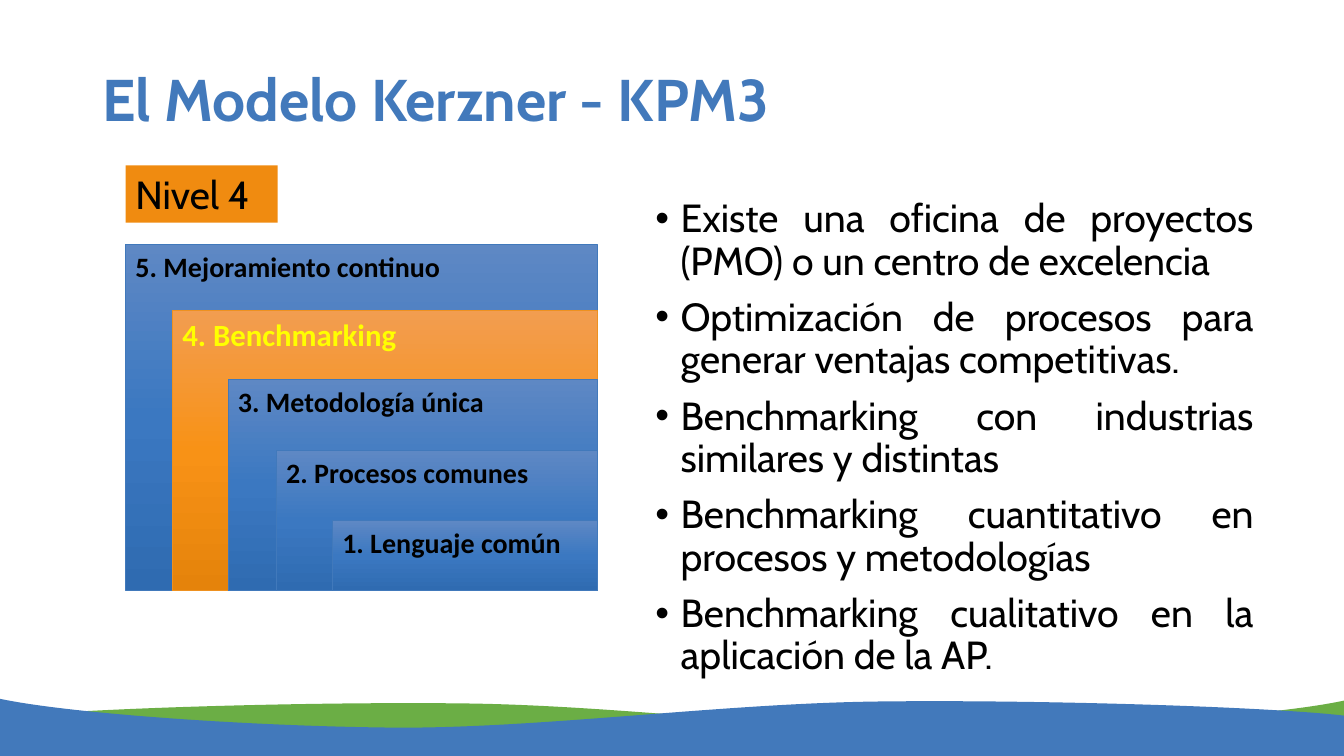
from copy import deepcopy

from lxml import etree
from pptx import Presentation
from pptx.dml.color import RGBColor
from pptx.enum.shapes import MSO_SHAPE
from pptx.enum.text import MSO_ANCHOR, MSO_AUTO_SIZE, PP_ALIGN
from pptx.oxml.ns import qn
from pptx.util import Pt

RECTANGLE = MSO_SHAPE.RECTANGLE
TOP, MIDDLE = MSO_ANCHOR.TOP, MSO_ANCHOR.MIDDLE
LEFT, JUSTIFY = PP_ALIGN.LEFT, PP_ALIGN.JUSTIFY
NO_AUTOFIT = MSO_AUTO_SIZE.NONE

WIDTH, HEIGHT = 960, 540
COLORS = {
    "blue": "4279BB", "green": "6BAE45", "orange": "F08B10",
    "black": "000000", "yellow": "FFFF00",
    "blue line": "4179BB", "orange line": "EE9120",
}
GRADIENTS = {
    "blue": ("5E88C4", "3B78C1", "2F6BB1"),
    "orange": ("F29D50", "F89216", "E5830B"),
}

# Wave crest from right to left: start point, then three Bézier curves
WAVE_START = (961, 12.2)
WAVE_CURVES = [
    ((905, 5.7), (739.4, 0.7), (627.1, 2.1)),
    ((515.5, 3.6), (391.7, 20.8), (287.3, 20.8)),
    ((182.9, 20.1), (49.7, 10.8), (0, 0)),
]

# Level name, offset from the left and top of the diagram
LEVELS = [
    ("5. Mejoramiento continuo", 0, 0),
    ("4. Benchmarking", 33.5, 47.2),
    ("3. Metodología única", 73.2, 96.4),
    ("2. Procesos comunes", 107.7, 147.3),
    ("1. Lenguaje común", 147.7, 197.3),
]
CURRENT_LEVEL = "4. Benchmarking"

PRACTICES = [
    "Existe una oficina de proyectos (PMO) o un centro de excelencia",
    "Optimización de procesos para generar ventajas competitivas.",
    "Benchmarking con industrias similares y distintas",
    "Benchmarking cuantitativo en procesos y metodologías",
    "Benchmarking cualitativo en la aplicación de la AP.",
]


def color(name):
    return RGBColor.from_string(COLORS[name])


def set_attributes(target, values):
    for name, value in values.items():
        setattr(target, name, value)


def place(shape, box):
    names = ("left", "top", "width", "height")
    set_attributes(shape, dict(zip(names, map(Pt, box))))


def write(paragraph, text, size, font_color="black", font="Cabin", bold=False, **layout):
    run = paragraph.add_run()
    run.text = text
    set_attributes(run.font, {"name": font, "size": Pt(size), "bold": bold})
    run.font.color.rgb = color(font_color)
    set_attributes(paragraph, {"alignment": LEFT, **layout})


def add_rectangle(slide, box):
    shape = slide.shapes.add_shape(RECTANGLE, *map(Pt, box))
    shape.shadow.inherit = False
    set_attributes(shape.text_frame, {"vertical_anchor": TOP, "word_wrap": True})
    return shape


def fill_gradient(shape, stop_colors):
    shape.fill.gradient()
    shape.fill.gradient_angle = 270
    # A new gradient has two stops; add the middle one
    first_stop = next(shape._element.spPr.iter(qn("a:gs")))
    first_stop.addnext(deepcopy(first_stop))
    for index, stop in enumerate(shape.fill.gradient_stops):
        stop.position = index / 2
        stop.color.rgb = RGBColor.from_string(stop_colors[index])


def bend_crest(wave):
    """Turn each three segments of the crest into one Bézier curve."""
    segments = list(wave._element.spPr.iter(qn("a:lnTo")))
    for index in range(len(WAVE_CURVES)):
        curve = etree.Element(qn("a:cubicBezTo"))
        group = segments[3 * index:3 * index + 3]
        group[0].addprevious(curve)
        for segment in group:
            curve.append(segment[0])
            segment.getparent().remove(segment)


def add_wave(slide, box, fill_name, mirrored=False):
    left, top, width, height = box
    crest = [WAVE_START] + [point for curve in WAVE_CURVES for point in curve]
    outline = crest + [(0, height), (width, height)]
    vertices = [(Pt(left + (width - x if mirrored else x)), Pt(top + y))
                for x, y in outline]
    builder = slide.shapes.build_freeform(*vertices[0])
    builder.add_line_segments(vertices[1:], close=True)
    wave = builder.convert_to_shape()
    bend_crest(wave)
    wave.shadow.inherit = False
    wave.fill.solid()
    wave.fill.fore_color.rgb = color(fill_name)
    wave.line.fill.background()


def add_title(slide, box):
    title = slide.shapes.title
    place(title, box)
    set_attributes(title.text_frame, {"vertical_anchor": MIDDLE, "auto_size": NO_AUTOFIT})
    write(title.text_frame.paragraphs[0], "El Modelo Kerzner - KPM3", 42, "blue",
          bold=True, line_spacing=0.9)


def add_practices(slide, box):
    body = slide.placeholders[1]
    place(body, box)
    frame = body.text_frame
    set_attributes(frame, {"vertical_anchor": TOP, "auto_size": NO_AUTOFIT})
    for index, practice in enumerate(PRACTICES):
        paragraph = frame.add_paragraph() if index else frame.paragraphs[0]
        write(paragraph, practice, 28, alignment=JUSTIFY, line_spacing=0.9,
              space_before=Pt(10), space_after=Pt(0))
        properties = paragraph._p.get_or_add_pPr()
        properties.set("marL", str(Pt(18)))
        properties.set("indent", str(-Pt(18)))
        etree.SubElement(properties, qn("a:buFont")).set("typeface", "Arial")
        etree.SubElement(properties, qn("a:buChar")).set("char", "•")


def add_level_label(slide, box):
    label = add_rectangle(slide, box)
    label.fill.solid()
    label.fill.fore_color.rgb = color("orange")
    label.line.fill.background()
    write(label.text_frame.paragraphs[0], "Nivel 4", 28)


def add_maturity_levels(slide, box):
    left, top, width, height = box
    for name, across, down in LEVELS:
        current = name == CURRENT_LEVEL
        tone = "orange" if current else "blue"
        # All levels share the right and bottom edges
        level = add_rectangle(slide, (left + across, top + down, width - across, height - down))
        fill_gradient(level, GRADIENTS[tone])
        level.line.color.rgb = color(f"{tone} line")
        level.line.width = Pt(0.5)
        write(level.text_frame.paragraphs[0], name, 22 if current else 20,
              "yellow" if current else "black", "Calibri", bold=True)


def main():
    presentation = Presentation()
    set_attributes(presentation, {"slide_width": Pt(WIDTH), "slide_height": Pt(HEIGHT)})
    slide = presentation.slides.add_slide(presentation.slide_layouts[1])

    # Footer waves
    add_wave(slide, (-0.7, 500.4, 961, 41), "green", mirrored=True)
    add_wave(slide, (-0.7, 499, 961, 41), "blue")

    # Title and list
    add_title(slide, (66, 21, 828, 104.4))
    add_practices(slide, (461, 138.5, 441.4, 352))

    # Nested maturity levels
    add_level_label(slide, (89.7, 118.1, 108.7, 41))
    add_maturity_levels(slide, (89.7, 174.6, 336.9, 247.4))

    presentation.save("out.pptx")


if __name__ == "__main__":
    main()
